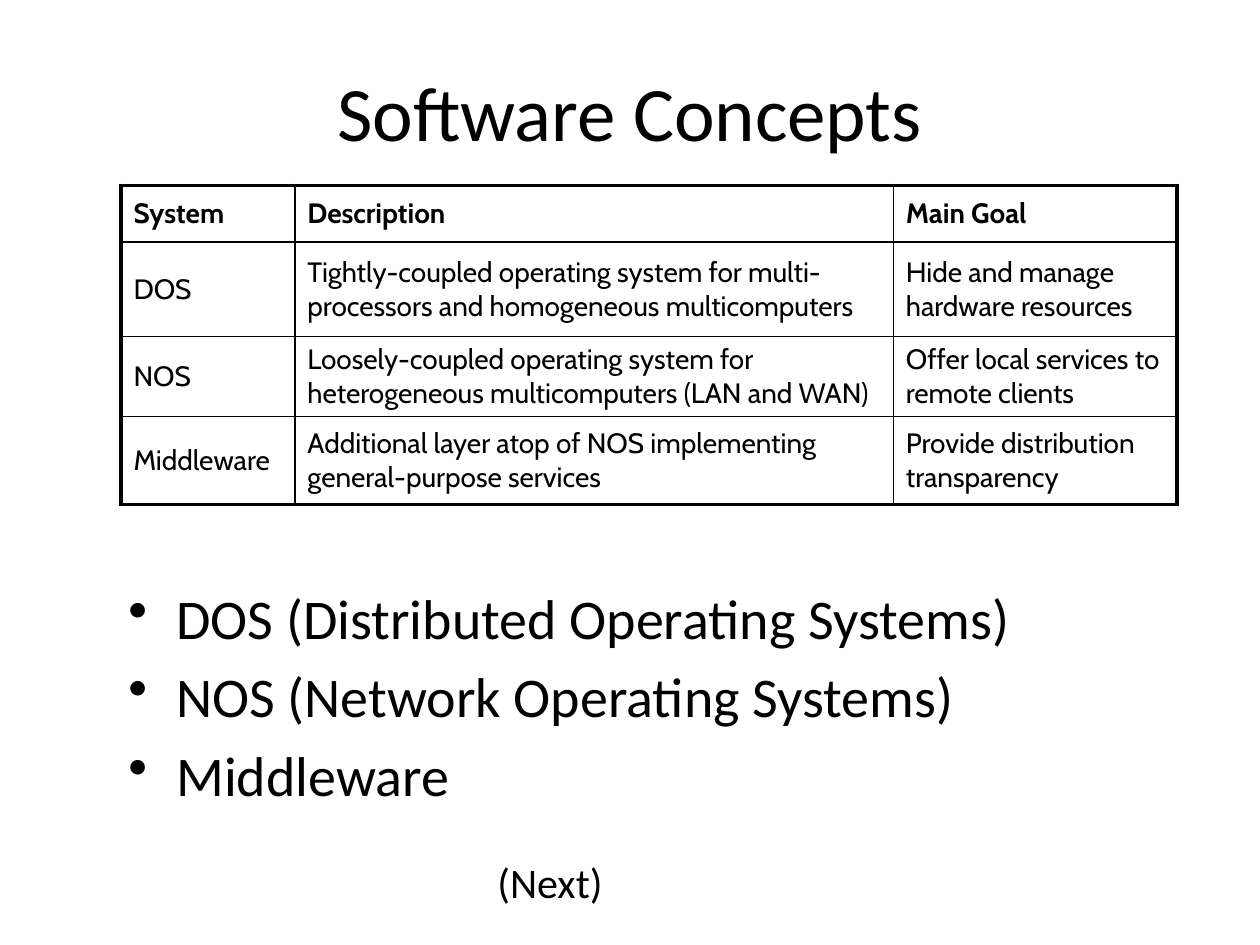
from lxml.etree import SubElement
from pptx import Presentation
from pptx.dml.color import RGBColor
from pptx.enum.text import MSO_ANCHOR as Anchor, MSO_AUTO_SIZE as AutoSize, PP_ALIGN as Align
from pptx.oxml.ns import qn
from pptx.util import Inches, Pt

BLACK = RGBColor(0, 0, 0)
BODY_FONT, TABLE_FONT = "Calibri", "Cabin"
THIN, THICK = Pt(1), Pt(2.25)

COLUMNS = [1.38, 4.75, 2.25]
ROWS = [0.45, 0.75, 0.62, 0.7]
SYSTEMS = [
    ["System", "Description", "Main Goal"],
    ["DOS",
     "Tightly-coupled operating system for multi-processors and homogeneous multicomputers",
     "Hide and manage hardware resources"],
    ["NOS",
     "Loosely-coupled operating system for heterogeneous multicomputers (LAN and WAN)",
     "Offer local services to remote clients"],
    ["Middleware",
     "Additional layer atop of NOS implementing general-purpose services",
     "Provide distribution transparency"],
]
BULLETS = [
    "DOS (Distributed Operating Systems)",
    "NOS (Network Operating Systems)",
    "Middleware",
]


def style(p, size, name=BODY_FONT, bold=False):
    p.font.size = Pt(size)
    p.font.name = name
    p.font.bold = bold
    p.font.color.rgb = BLACK


def set_title(s, text):
    title = s.shapes.title
    title.left, title.top = Inches(0.75), Inches(0.25)
    title.width, title.height = Inches(8.5), Inches(1.25)
    tf = title.text_frame
    tf.text = text
    tf.vertical_anchor = Anchor.MIDDLE
    p = tf.paragraphs[0]
    p.alignment = Align.CENTER
    style(p, 44)


def set_border(cell, side, width):
    """Draw one side (L, R, T or B) of a cell as a solid black line."""
    ln = SubElement(cell._tc.get_or_add_tcPr(), qn(f"a:ln{side}"), w=str(width))
    fill = SubElement(ln, qn("a:solidFill"))
    SubElement(fill, qn("a:srgbClr"), val=str(BLACK))


def add_systems_table(s):
    """Add the table with thick outer and thin inner borders."""
    last_row, last_col = len(ROWS) - 1, len(COLUMNS) - 1
    table = s.shapes.add_table(
        len(ROWS), len(COLUMNS), Inches(0.96), Inches(1.47),
        Inches(sum(COLUMNS)), Inches(sum(ROWS))).table
    table.first_row = table.horz_banding = False
    for column, width in zip(table.columns, COLUMNS):
        column.width = Inches(width)
    for i, (height, texts) in enumerate(zip(ROWS, SYSTEMS)):
        table.rows[i].height = Inches(height)
        for j, text in enumerate(texts):
            cell = table.cell(i, j)
            cell.text = text
            cell.vertical_anchor = Anchor.MIDDLE
            style(cell.text_frame.paragraphs[0], 16, TABLE_FONT, bold=i == 0)
            outer = {"L": j == 0, "R": j == last_col, "T": i == 0, "B": i == last_row}
            for side, is_outer in outer.items():
                set_border(cell, side, THICK if is_outer else THIN)
            cell.fill.background()


def add_bullets(s, texts):
    box = s.shapes.add_textbox(Inches(0.92), Inches(4.58), Inches(8.83), Inches(2.08))
    tf = box.text_frame
    tf.word_wrap = True
    for i, text in enumerate(texts):
        p = tf.add_paragraph() if i else tf.paragraphs[0]
        p.text = text
        p.space_before = Pt(6.4)
        style(p, 32)
        pPr = p._p.get_or_add_pPr()
        pPr.set("marL", str(Inches(0.38)))
        pPr.set("indent", str(-Inches(0.38)))
        bullet = pPr.makeelement(qn("a:buChar"), {"char": "•"})
        pPr.find(qn("a:defRPr")).addprevious(bullet)


def add_label(s, text):
    box = s.shapes.add_textbox(Inches(3.85), Inches(6.75), Inches(1.04), Inches(0.5))
    tf = box.text_frame
    tf.word_wrap = False
    tf.auto_size = AutoSize.SHAPE_TO_FIT_TEXT
    tf.text = text
    style(tf.paragraphs[0], 24)


def main():
    prs = Presentation()
    prs.slide_width, prs.slide_height = Inches(10), Inches(7.5)
    s = prs.slides.add_slide(prs.slide_layouts[5])
    set_title(s, "Software Concepts")
    add_bullets(s, BULLETS)
    add_systems_table(s)
    add_label(s, "(Next)")
    prs.save("out.pptx")


if __name__ == "__main__":
    main()
